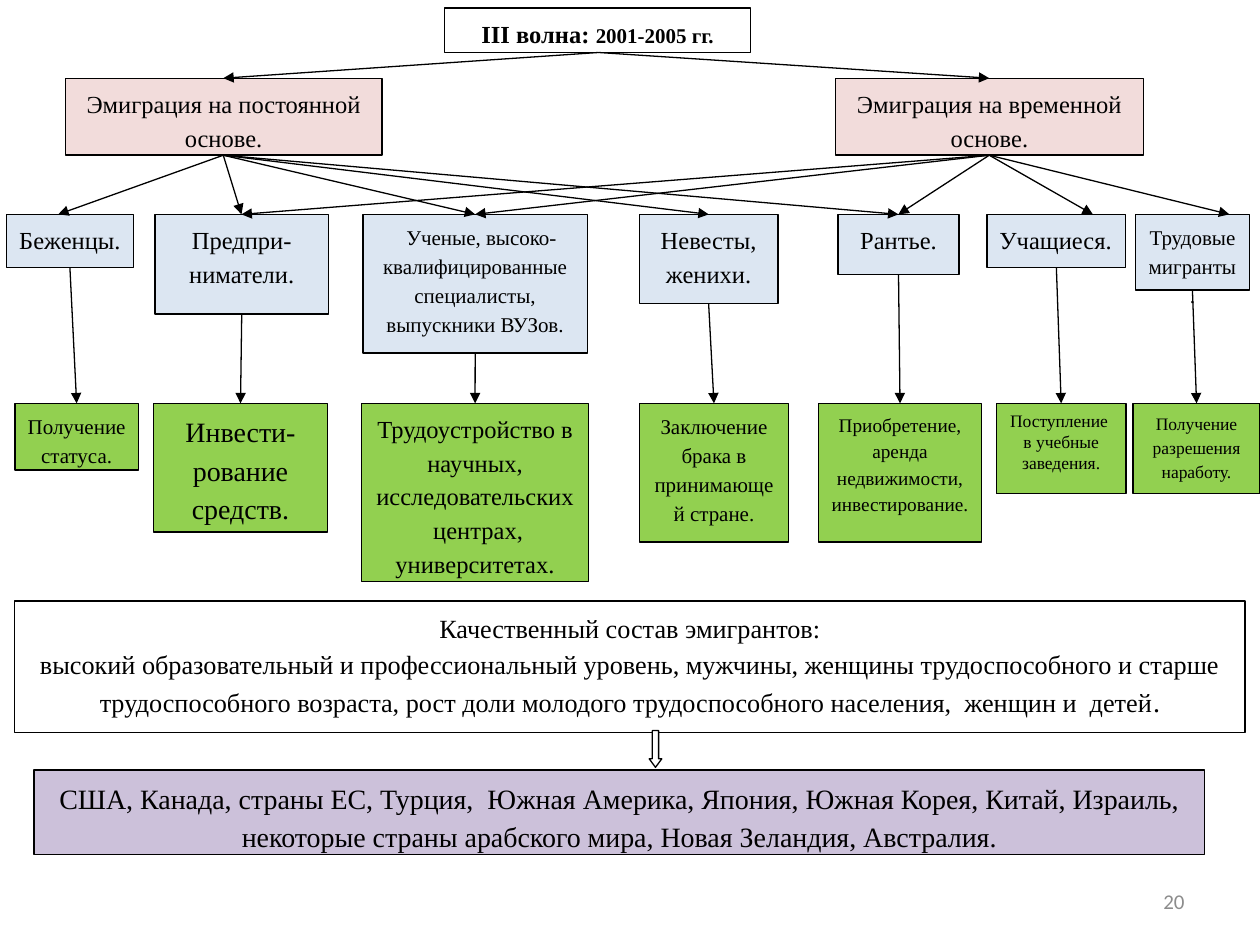
from lxml import etree
from pptx import Presentation
from pptx.dml.color import RGBColor
from pptx.enum import shapes as kinds, text as txt
from pptx.oxml.ns import qn
from pptx.util import Pt

HUES = {"ink": "000000", "white": "FFFFFF", "pink": "F2DCDB", "blue": "DCE6F2",
        "green": "92D050", "violet": "CCC1DA", "grey": "8C8C8C"}
HUES = {name: RGBColor.from_string(code) for name, code in HUES.items()}
MID, LOW = 122.5, 230.5
LEFT, CENTER = txt.PP_ALIGN.LEFT, txt.PP_ALIGN.CENTER

deck = Presentation()
deck.slide_width, deck.slide_height = Pt(720), Pt(540)
slide = deck.slides.add_slide(deck.slide_layouts[5])


def dress(box, words, size, fill, **extra):
    """Fill and outline a box and set its text, one paragraph per line."""
    box.fill.solid()
    box.fill.fore_color.rgb = HUES[fill]
    box.line.color.rgb = HUES["ink"]
    box.line.width = Pt(0.75)
    frame = box.text_frame
    frame.text = words
    for key, val in {"word_wrap": True, "vertical_anchor": txt.MSO_ANCHOR.TOP,
                     "auto_size": txt.MSO_AUTO_SIZE.NONE}.items():
        setattr(frame, key, val)
    form = {"alignment": CENTER, "line_spacing": 1.15, "space_before": Pt(0),
            "space_after": Pt(10)} | extra
    font = {"name": "Times New Roman", "size": Pt(size), "bold": False}
    for para in frame.paragraphs:
        for key, val in form.items():
            setattr(para, key, val)
        for run in para.runs:
            for key, val in font.items():
                setattr(run.font, key, val)
            run.font.color.rgb = HUES["ink"]
    return frame


def arrow(x1, y1, x2, y2):
    line = slide.shapes.add_connector(
        kinds.MSO_CONNECTOR.STRAIGHT, Pt(x1), Pt(y1), Pt(x2), Pt(y2))
    line.line.color.rgb = HUES["ink"]
    line.line.width = Pt(0.75)
    etree.SubElement(line.line._get_or_add_ln(), qn("a:tailEnd"), type="triangle")
    etree.SubElement(line._element.spPr, qn("a:effectLst"))


# Heading
title = slide.shapes.title
for key, val in {"left": 254, "top": 4.5, "width": 175, "height": 25.5}.items():
    setattr(title, key, Pt(val))
para = dress(title, "III волна: ", 14, "white").paragraphs[0]
years = para.add_run()
years.text = "2001-2005 гг."
for run, size in zip(para.runs, (14, 12)):
    for key, val in {"name": "Times New Roman", "size": Pt(size), "bold": True}.items():
        setattr(run.font, key, val)
    run.font.color.rgb = HUES["ink"]

tight = {"space_after": Pt(0)}
# words, size, fill, left, top, width, height, paragraph format
boxes = [
    ("Эмиграция на постоянной основе.", 14, "pink", 37.3, 44.7, 181, 44, {}),
    ("Эмиграция на временной основе.", 14, "pink", 477.3, 44.7, 176.2, 44, {}),
    ("Качественный состав эмигрантов:\nвысокий образовательный и профессиональный "
     "уровень, мужчины, женщины трудоспособного и старше трудоспособного возраста, "
     "рост доли молодого трудоспособного населения,  женщин и  детей",
     15, "white", 8.5, 343.5, 703, 75, tight),
    ("США, Канада, страны ЕС, Турция,  Южная Америка, Япония, Южная Корея, Китай, "
     "Израиль, некоторые страны арабского мира, Новая Зеландия, Австралия.",
     16, "violet", 19.5, 440, 669, 48.3, {}),
]

# Group of emigrants and what it seeks: words, size, left, width, height, format
groups = [
    (("Беженцы.", 14, 3.6, 72.7, 30.3, {}),
     ("Получение статуса.", 12, 8.5, 70.6, 38, {})),
    (("Предпри-\nниматели.", 14, 88.5, 99.3, 57, tight),
     ("Инвести- рование средств.", 16, 87.8, 99.3, 73.5, {})),
    (("Ученые, высоко-квалифицированные специалисты, выпускники ВУЗов.",
      12, 207.4, 128.3, 79.3, {}),
     ("Трудоустройство в научных, исследовательских  центрах, университетах.",
      14, 206.7, 129.6, 102, {})),
    (("Невесты, женихи.", 14, 365.3, 79.3, 51, {}),
     ("Заключение брака в принимающей стране.", 12, 365.3, 85.4, 79.3, {})),
    (("Рантье.", 14, 478.8, 69.3, 34.5, {}),
     ("Приобретение, аренда недвижимости, инвестирование.", 11, 467.8, 93, 79.3, {})),
    (("Учащиеся.", 14, 564, 79.3, 30.3, {"alignment": LEFT}),
     ("Поступление \nв учебные заведения.", 10, 569.3, 74.2, 51.7,
      tight | {"line_spacing": 1.0})),
    (("Трудовые мигранты.", 12, 648.7, 65.4, 43.3, {}),
     ("Получение разрешения наработу.", 10, 647.5, 72.5, 51.7, {})),
]
for pair in groups:
    for (words, size, left, wide, high, form), top, hue in zip(
            pair, (MID, LOW), ("blue", "green")):
        boxes.append((words, size, hue, left, top, wide, high, form))

frames = []
for words, size, hue, left, top, wide, high, form in boxes:
    box = slide.shapes.add_shape(
        kinds.MSO_SHAPE.RECTANGLE, Pt(left), Pt(top), Pt(wide), Pt(high))
    box.shadow.inherit = False
    frames.append(dress(box, words, size, hue, **form))
    if words.startswith("Ученые"):
        box.text_frame.paragraphs[0]._p.get_or_add_pPr().set("indent", str(Pt(7.2)))

stop = frames[2].paragraphs[1].add_run()
stop.text = "."
for key, val in {"name": "Times New Roman", "size": Pt(16)}.items():
    setattr(stop.font, key, val)
stop.font.color.rgb = HUES["ink"]

# Arrows from the heading, from both kinds of emigration, and down each column
entries = [33.3, 138, 271.5, 405, 513.4, 624.5, 702.5]
for x, targets in ((127.6, (0, 1, 2, 3, 4)), (565.3, (1, 2, 4, 5, 6))):
    arrow(342, 30, x, 44.7)
    for n in targets:
        arrow(x, 88.7, entries[n], MID)
for upper, lower in groups:
    arrow(upper[2] + upper[3] / 2, MID + upper[4], lower[2] + lower[3] / 2, LOW)

down = slide.shapes.add_shape(
    kinds.MSO_SHAPE.DOWN_ARROW, Pt(371), Pt(417.5), Pt(7.2), Pt(21))
down.shadow.inherit = False
down.adjustments[1] = 0.68
dress(down, "", 12, "white")

# Page number
page = slide.shapes.add_textbox(Pt(516), Pt(500.5), Pt(168), Pt(28.8)).text_frame
page.word_wrap = True
page.vertical_anchor = txt.MSO_ANCHOR.MIDDLE
page.text = "20"
page.paragraphs[0].alignment = txt.PP_ALIGN.RIGHT
font = page.paragraphs[0].runs[0].font
for key, val in {"name": "Calibri", "size": Pt(12)}.items():
    setattr(font, key, val)
font.color.rgb = HUES["grey"]

deck.save("out.pptx")
